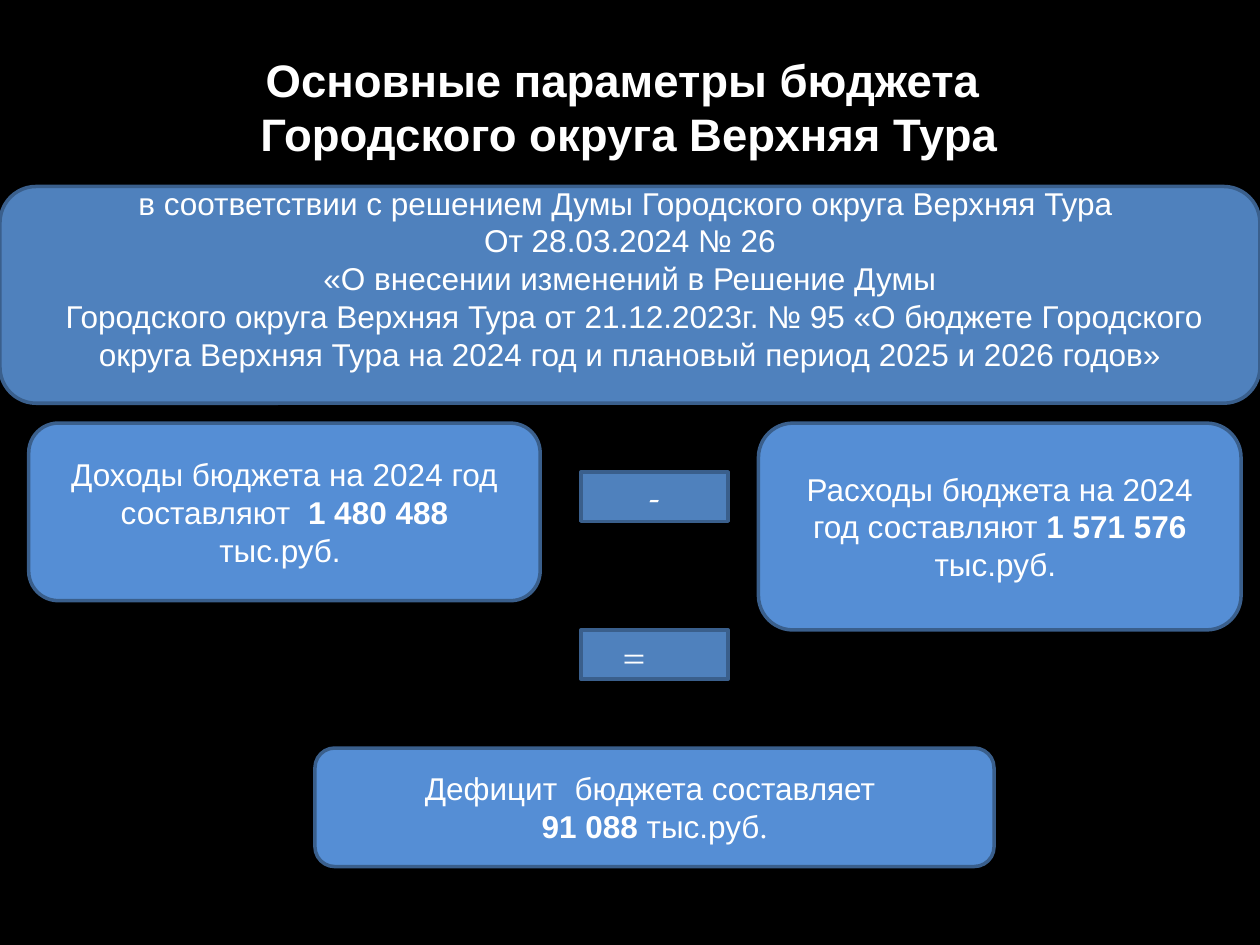
from dataclasses import dataclass

from pptx import Presentation
from pptx import util as u
from pptx.dml.color import RGBColor
from pptx.enum import shapes, text

BLACK, WHITE = "000000", "FFFFFF"
BRIGHT_BLUE, STEEL_BLUE, EDGE_BLUE = "558ED5", "4F81BD", "3A5F8C"
SANS, SERIF, SIGN_FONT = "Arial", "Times New Roman", "TeX Gyre Pagella"
ROUNDED = shapes.MSO_SHAPE.ROUNDED_RECTANGLE
RECTANGLE = shapes.MSO_SHAPE.RECTANGLE


@dataclass(frozen=True)
class Run:
    wording: str
    bold: bool = False
    font: str = SANS


@dataclass(frozen=True)
class Panel:
    left: float
    top: float
    width: float
    height: float
    paragraphs: list[list[Run]]
    fill: str = BRIGHT_BLUE
    outline: shapes.MSO_SHAPE = ROUNDED
    right_inset: float = 0.25
    bottom_inset: float = 0.13


def color(code: str) -> RGBColor:
    return RGBColor.from_string(code)


def write(frame, paragraphs: list[list[Run]], *, size: float = 18,
          right_inset: float = 0.25, bottom_inset: float = 0.13) -> None:
    frame.word_wrap = True
    frame.vertical_anchor = text.MSO_ANCHOR.MIDDLE
    frame.margin_right = u.Cm(right_inset)
    frame.margin_bottom = u.Cm(bottom_inset)
    for index, runs in enumerate(paragraphs):
        paragraph = frame.add_paragraph() if index else frame.paragraphs[0]
        paragraph.alignment = text.PP_ALIGN.CENTER
        for part in runs:
            run = paragraph.add_run()
            run.text = part.wording
            run.font.name = part.font
            run.font.size = u.Pt(size)
            run.font.bold = part.bold
            run.font.color.rgb = color(WHITE)


def draw_panel(slide, panel: Panel) -> None:
    box = slide.shapes.add_shape(panel.outline, u.Cm(panel.left), u.Cm(panel.top),
                                 u.Cm(panel.width), u.Cm(panel.height))
    box.shadow.inherit = False
    box.fill.solid()
    box.fill.fore_color.rgb = color(panel.fill)
    box.line.color.rgb = color(EDGE_BLUE)
    box.line.width = u.Pt(2)
    write(box.text_frame, panel.paragraphs,
          right_inset=panel.right_inset, bottom_inset=panel.bottom_inset)


def sign(symbol: str, top: float, right_inset: float = 0.25) -> Panel:
    return Panel(11.71, top, 2.97, 0.99, [[Run(symbol, font=SIGN_FONT)]],
                 STEEL_BLUE, RECTANGLE, right_inset)


TITLE = [
    [Run("Основные параметры бюджета ", bold=True)],
    [Run("Городского округа Верхняя Тура", bold=True)],
]

INCOME = Panel(0.58, 8.53, 10.31, 3.58, [
    [Run("Доходы бюджета на 2024 год составляют  "), Run("1 480 488", bold=True)],
    [Run("тыс.руб. ")],
])

EXPENSES = Panel(15.29, 8.53, 9.73, 4.17, [
    [Run("Расходы бюджета на 2024 год составляют "),
     Run("1 571 576 ", bold=True), Run("тыс.руб. ")],
])

DEFICIT = Panel(6.35, 15.08, 13.69, 2.39, [
    [Run("Дефицит  бюджета составляет ")],
    [Run("91 088 ", bold=True), Run("тыс.руб"), Run(".", font=SERIF)],
])

DECISION = Panel(0, 3.76, 25.4, 4.37, [
    [Run("в соответствии с решением Думы Городского округа Верхняя Тура ")],
    [Run("От 28.03.2024 № 26")],
    [Run("«О внесении изменений в Решение Думы")],
    [Run(" Городского округа Верхняя Тура от 21.12.2023г. № 95 «О бюджете Городского "
         "округа Верхняя Тура на 2024 год и плановый период 2025 и 2026 годов»")],
], STEEL_BLUE, bottom_inset=0.8)


def main() -> None:
    deck = Presentation()
    deck.slide_width, deck.slide_height = u.Cm(25.4), u.Cm(19.05)
    slide = deck.slides.add_slide(deck.slide_layouts[6])
    slide.background.fill.solid()
    slide.background.fill.fore_color.rgb = color(BLACK)

    title = slide.shapes.add_textbox(u.Cm(0.58), u.Cm(0.74), u.Cm(24.21), u.Cm(2.82))
    write(title.text_frame, TITLE, size=26)

    minus, equals = sign("-", 9.52), sign("=", 12.7, right_inset=1.05)
    for panel in (INCOME, EXPENSES, DEFICIT, minus, equals, DECISION):
        draw_panel(slide, panel)

    deck.save("out.pptx")


if __name__ == "__main__":
    main()
